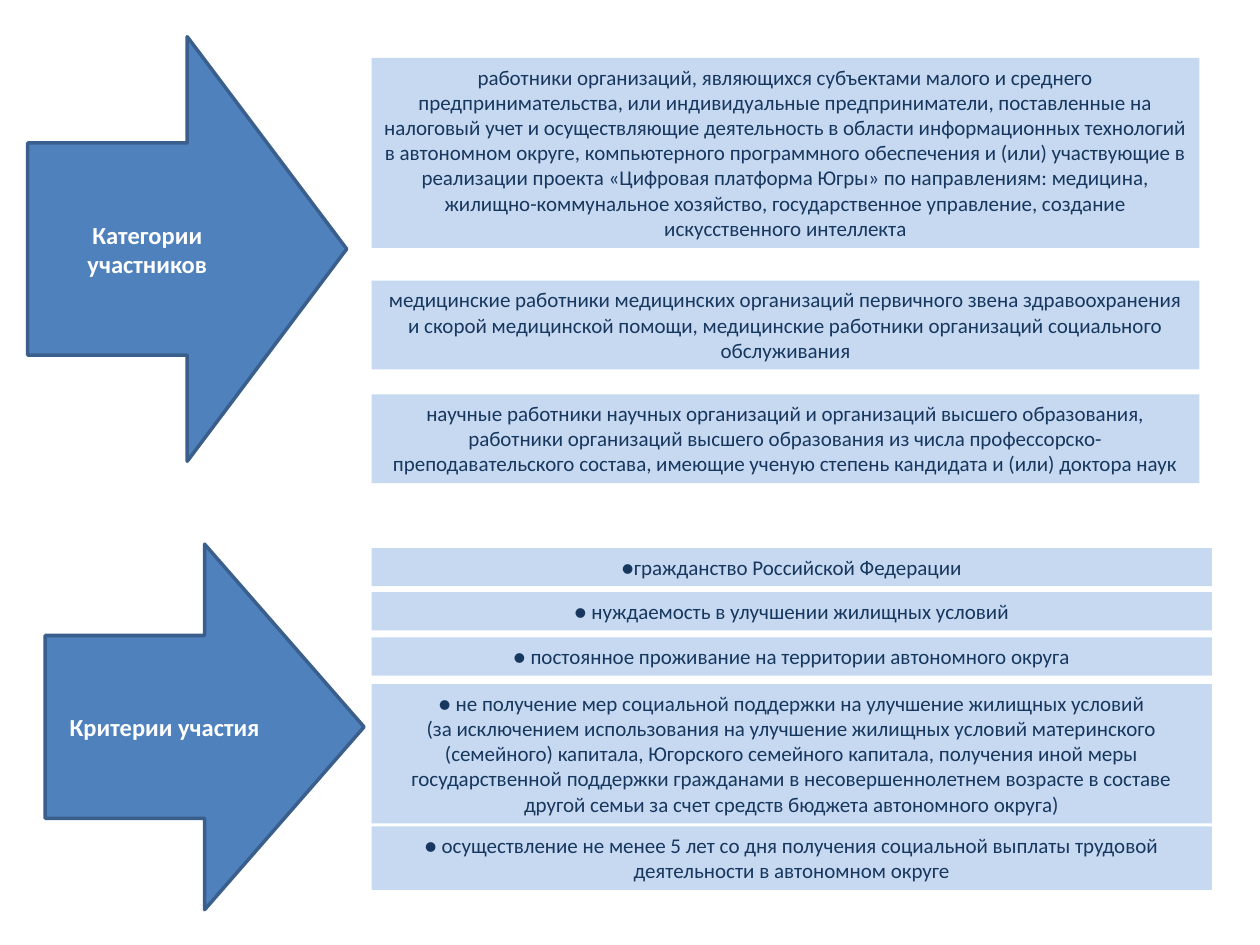
from pptx import Presentation
from pptx.dml.color import RGBColor
from pptx.enum.shapes import MSO_SHAPE
from pptx.enum.text import MSO_ANCHOR, MSO_AUTO_SIZE, PP_ALIGN
from pptx.util import Cm, Pt

COLORS = {
    "arrow": "4F81BD",
    "outline": "3A5F8C",
    "row": "C6D9F1",
    "text": "17375E",
    "label": "FFFFFF",
}
ARROW_W = 6.43
LINE_H, ROW_PADDING = 0.51, 0.26

# Each row: top within its section, number of text lines, text
CATEGORIES = [
    (0.43, 7, "работники организаций, являющихся субъектами малого и среднего "
     "предпринимательства, или индивидуальные предприниматели, поставленные на "
     "налоговый учет и осуществляющие деятельность в области информационных "
     "технологий в автономном округе, компьютерного программного обеспечения и "
     "(или) участвующие в реализации проекта «Цифровая платформа Югры» по "
     "направлениям: медицина, жилищно-коммунальное хозяйство, государственное "
     "управление, создание искусственного интеллекта"),
    (4.92, 3, "медицинские работники медицинских организаций первичного звена "
     "здравоохранения и скорой медицинской помощи, медицинские работники "
     "организаций социального обслуживания"),
    (7.21, 3, "научные работники научных организаций и организаций высшего "
     "образования, работники организаций высшего образования из числа "
     "профессорско-преподавательского состава, имеющие ученую степень кандидата "
     "и (или) доктора наук"),
]
CRITERIA = [
    (0.08, 1, "●гражданство Российской Федерации"),
    (0.97, 1, "● нуждаемость в улучшении жилищных условий"),
    (1.88, 1, "● постоянное проживание на территории автономного округа"),
    (2.82, 5, "● не получение мер социальной поддержки на улучшение жилищных "
     "условий\n(за исключением использования на улучшение жилищных условий "
     "материнского (семейного) капитала, Югорского семейного капитала, получения "
     "иной меры государственной поддержки гражданами в несовершеннолетнем "
     "возрасте в составе другой семьи за счет средств бюджета автономного округа)"),
    (5.69, 2, "● осуществление не менее 5 лет со дня получения социальной выплаты "
     "трудовой деятельности в автономном округе"),
]


def rgb(name):
    return RGBColor.from_string(COLORS[name])


def add_block(slide, kind, box, fill, text, size, color, bold=False):
    """Add a filled shape with centred text."""
    sp = slide.shapes.add_shape(kind, *(Cm(v) for v in box))
    sp.shadow.inherit = False
    sp.fill.solid()
    sp.fill.fore_color.rgb = rgb(fill)
    sp.line.fill.background()
    tf = sp.text_frame
    tf.word_wrap = True
    p = tf.paragraphs[0]
    p.alignment = PP_ALIGN.CENTER
    for i, line in enumerate(text.split("\n")):
        if i:
            p.add_line_break()
        r = p.add_run()
        r.text = line
        r.font.name = "Calibri"
        r.font.size = Pt(size)
        r.font.bold = bold
        r.font.color.rgb = rgb(color)
    return sp


def add_section(slide, box, row_w, label, rows):
    """Arrow at the left of the box, rows along its right edge."""
    left, top, width, height = box

    # Labelled arrow
    sp = add_block(slide, MSO_SHAPE.RIGHT_ARROW, (left, top, ARROW_W, height),
                   "arrow", label, 14, "label", bold=True)
    sp.line.color.rgb = rgb("outline")
    sp.line.width = Pt(2)
    sp.text_frame.vertical_anchor = MSO_ANCHOR.MIDDLE

    # Text rows
    for offset, lines, text in rows:
        row_box = (left + width - row_w, top + offset,
                   row_w, lines * LINE_H + ROW_PADDING)
        sp = add_block(slide, MSO_SHAPE.RECTANGLE, row_box, "row", text, 12, "text")
        sp.text_frame.vertical_anchor = MSO_ANCHOR.TOP
        sp.text_frame.auto_size = MSO_AUTO_SIZE.SHAPE_TO_FIT_TEXT


def main():
    prs = Presentation()
    prs.slide_width, prs.slide_height = Cm(25.4), Cm(19.05)
    s = prs.slides.add_slide(prs.slide_layouts[6])
    add_section(s, (0.56, 0.74, 23.62, 8.56), 16.69,
                "Категории участников", CATEGORIES)
    add_section(s, (0.91, 10.97, 23.52, 7.37), 16.94,
                "Критерии участия", CRITERIA)
    prs.save("out.pptx")


if __name__ == "__main__":
    main()
